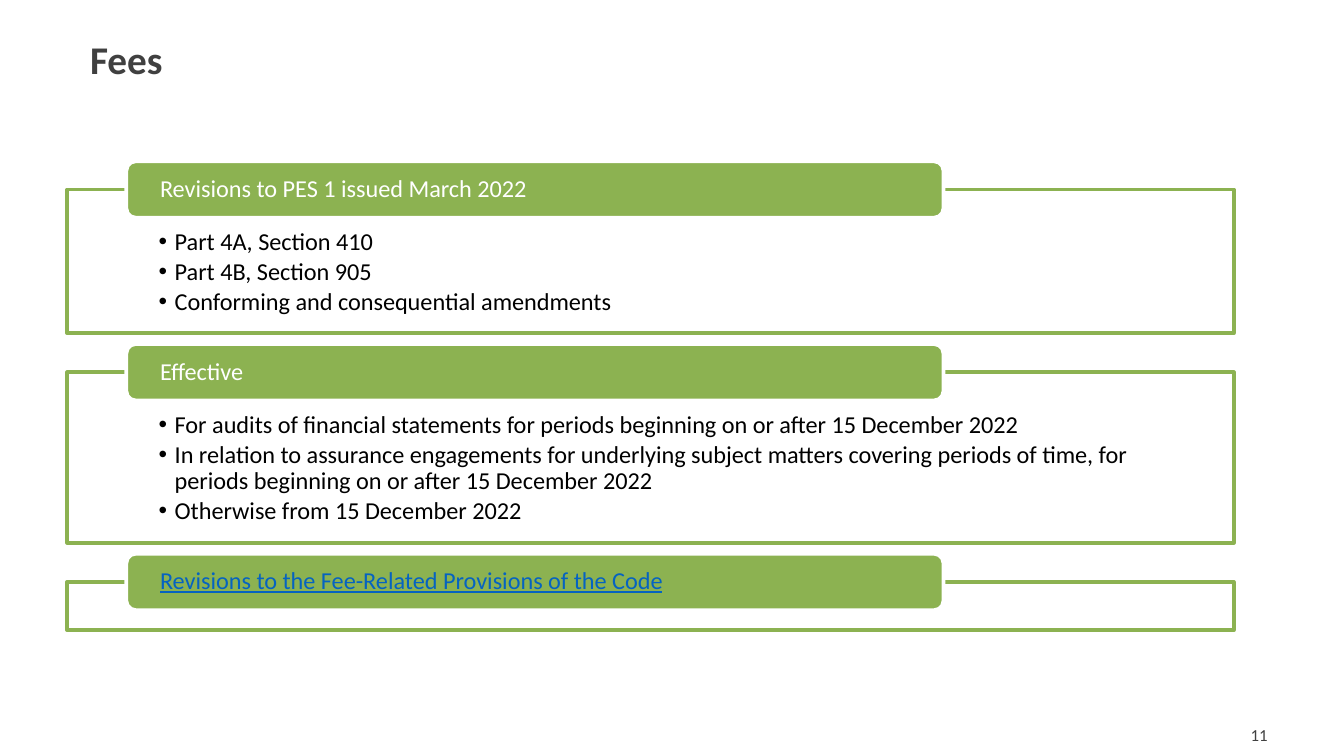
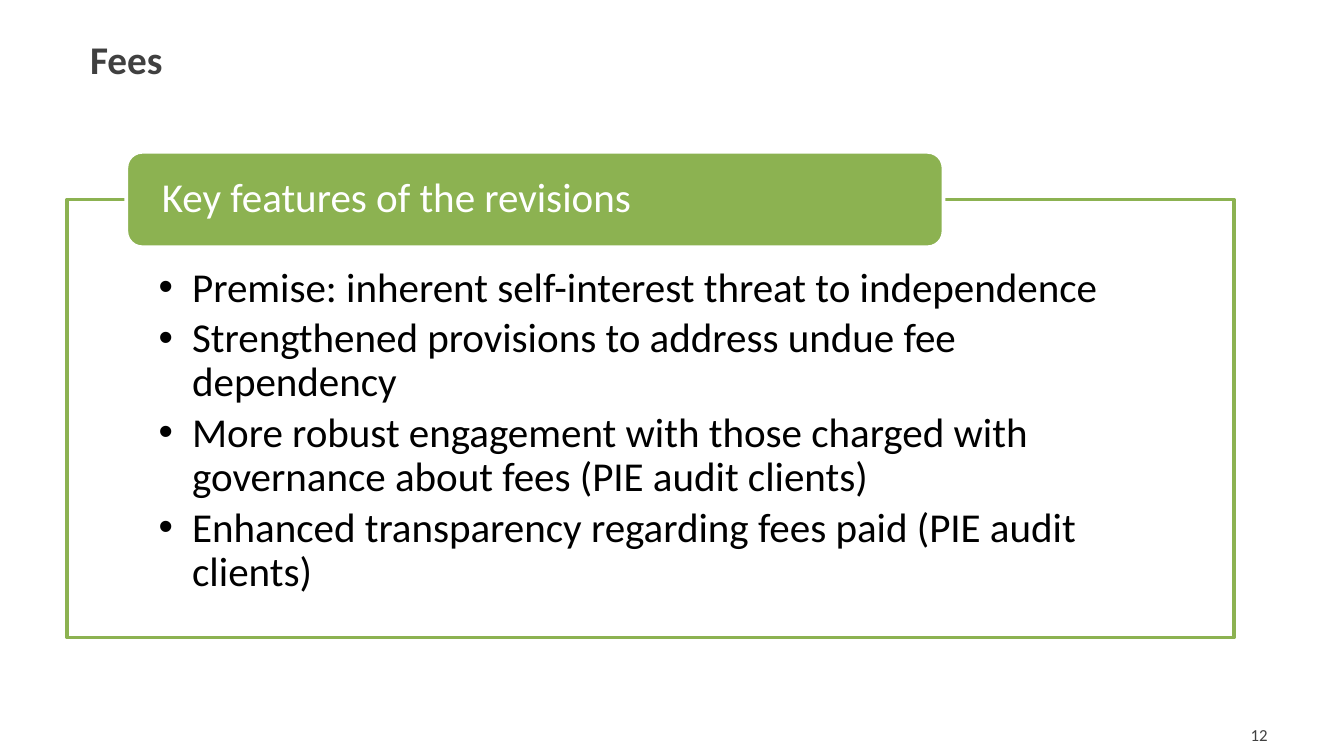
from lxml import etree
from pptx import Presentation
from pptx.dml.color import RGBColor
from pptx.enum.shapes import MSO_SHAPE
from pptx.enum.text import MSO_ANCHOR, MSO_AUTO_SIZE, PP_ALIGN
from pptx.oxml.ns import qn
from pptx.util import Inches, Pt

GREEN = RGBColor(0x8C, 0xB2, 0x51)
WHITE = RGBColor(0xFF, 0xFF, 0xFF)
BLACK = RGBColor(0x00, 0x00, 0x00)
GREY = RGBColor(0x40, 0x40, 0x40)
LINK_BLUE = RGBColor(0x05, 0x63, 0xC1)

HEADING = {"color": WHITE}
LINK_HEADING = {"color": LINK_BLUE, "underline": True}

# Each panel: heading, heading format, frame height, bullets
SLIDES = [
    {
        "title": "Fees", "number": "11",
        "top": 1.2, "tab_height": 0.42, "size": 13, "indent": 0.12,
        "insets": (0.68, 0.3, 0.67, 0.1),
        "panels": [
            ("Revisions to PES 1 issued March 2022", HEADING, 1.07, [
                "Part 4A, Section 410",
                "Part 4B, Section 905",
                "Conforming and consequential amendments",
            ]),
            ("Effective", HEADING, 1.27, [
                "For audits of financial statements for periods beginning on or after "
                "15 December 2022",
                "In relation to assurance engagements for underlying subject matters "
                "covering periods of time, for periods beginning on or after "
                "15 December 2022",
                "Otherwise from 15 December 2022",
            ]),
            ("Revisions to the Fee-Related Provisions of the Code", LINK_HEADING, 0.36, []),
        ],
    },
    {
        "title": "Fees", "number": "12",
        "top": 1.13, "tab_height": 0.71, "size": 22, "indent": 0.25,
        "insets": (0.68, 0.5, 0.67, 0.17),
        "panels": [
            ("Key features of the revisions", HEADING, 3.26, [
                "Premise: inherent self-interest threat to independence",
                "Strengthened provisions to address undue fee dependency",
                "More robust engagement with those charged with governance about fees "
                "(PIE audit clients)",
                "Enhanced transparency regarding fees paid (PIE audit clients)",
            ]),
        ],
    },
]

FRAME_LEFT, FRAME_WIDTH = 0.5, 8.68
TAB_LEFT, TAB_WIDTH = 0.94, 6.08
TAB_INSETS = (0.23, 0, 0.23, 0)
TEXT_BOX_INSETS = (0.1, 0.05, 0.1, 0.05)
PANEL_GAP = 0.08
BULLET_SPACING = 0.15  # share of the text size


def set_frame(text_frame, insets, anchor):
    left, top, right, bottom = (Inches(inset) for inset in insets)
    settings = {
        "margin_left": left, "margin_top": top,
        "margin_right": right, "margin_bottom": bottom,
        "word_wrap": True, "auto_size": MSO_AUTO_SIZE.NONE,
        "vertical_anchor": anchor,
    }
    for name, value in settings.items():
        setattr(text_frame, name, value)


def write(paragraph, text, size, color, line_spacing=1.0,
          alignment=PP_ALIGN.LEFT, **font_format):
    paragraph.alignment = alignment
    paragraph.line_spacing = line_spacing
    run = paragraph.add_run()
    run.text = text
    run.font.color.rgb = color
    font_format.update(name="Calibri", size=Pt(size))
    for name, value in font_format.items():
        setattr(run.font, name, value)


def add_bullet(paragraph, indent):
    properties = paragraph._p.get_or_add_pPr()
    properties.set("marL", str(Inches(indent)))
    properties.set("indent", str(-Inches(indent)))
    etree.SubElement(properties, qn("a:buFont")).set("typeface", "Arial")
    etree.SubElement(properties, qn("a:buChar")).set("char", "•")


def add_box(slide, kind, position, fill, line):
    shape = slide.shapes.add_shape(kind, *(Inches(length) for length in position))
    shape.shadow.inherit = False
    shape.fill.solid()
    shape.fill.fore_color.rgb = fill
    shape.line.color.rgb = line
    shape.line.width = Pt(2)
    return shape


def add_panel(slide, content, top, panel):
    """Draw a framed list with its heading tab centred on the frame's top edge."""
    heading, heading_format, frame_height, bullets = panel
    size, tab_height = content["size"], content["tab_height"]
    frame_top = top + tab_height / 2

    frame = add_box(slide, MSO_SHAPE.RECTANGLE,
                    (FRAME_LEFT, frame_top, FRAME_WIDTH, frame_height), WHITE, GREEN)
    text_frame = frame.text_frame
    set_frame(text_frame, content["insets"], MSO_ANCHOR.TOP)
    for index, bullet in enumerate(bullets):
        paragraph = text_frame.add_paragraph() if index else text_frame.paragraphs[0]
        add_bullet(paragraph, content["indent"])
        paragraph.space_after = Pt(round(size * BULLET_SPACING, 1))
        write(paragraph, bullet, size, BLACK, line_spacing=0.9)

    tab = add_box(slide, MSO_SHAPE.ROUNDED_RECTANGLE,
                  (TAB_LEFT, top, TAB_WIDTH, tab_height), GREEN, WHITE)
    set_frame(tab.text_frame, TAB_INSETS, MSO_ANCHOR.MIDDLE)
    write(tab.text_frame.paragraphs[0], heading, size, line_spacing=0.9, **heading_format)
    return frame_top + frame_height


def add_title(slide, text):
    title = slide.shapes.title
    title.left, title.top = Inches(0.57), Inches(0.18)
    title.width, title.height = Inches(8.68), Inches(0.53)
    set_frame(title.text_frame, TEXT_BOX_INSETS, MSO_ANCHOR.TOP)
    write(title.text_frame.paragraphs[0], text, 21, GREY, line_spacing=1.1, bold=True)


def add_slide_number(slide, number):
    box = slide.shapes.add_textbox(Inches(7.28), Inches(5.32), Inches(2.25), Inches(0.3))
    set_frame(box.text_frame, TEXT_BOX_INSETS, MSO_ANCHOR.MIDDLE)
    write(box.text_frame.paragraphs[0], number, 9, GREY, alignment=PP_ALIGN.RIGHT)


def main():
    presentation = Presentation()
    presentation.slide_width = Inches(10)
    presentation.slide_height = Inches(10) * 9 // 16
    title_only = presentation.slide_layouts.get_by_name("Title Only")
    for content in SLIDES:
        slide = presentation.slides.add_slide(title_only)
        add_title(slide, content["title"])
        add_slide_number(slide, content["number"])
        top = content["top"]
        for panel in content["panels"]:
            top = add_panel(slide, content, top, panel) + PANEL_GAP
    presentation.save("out.pptx")


if __name__ == "__main__":
    main()
